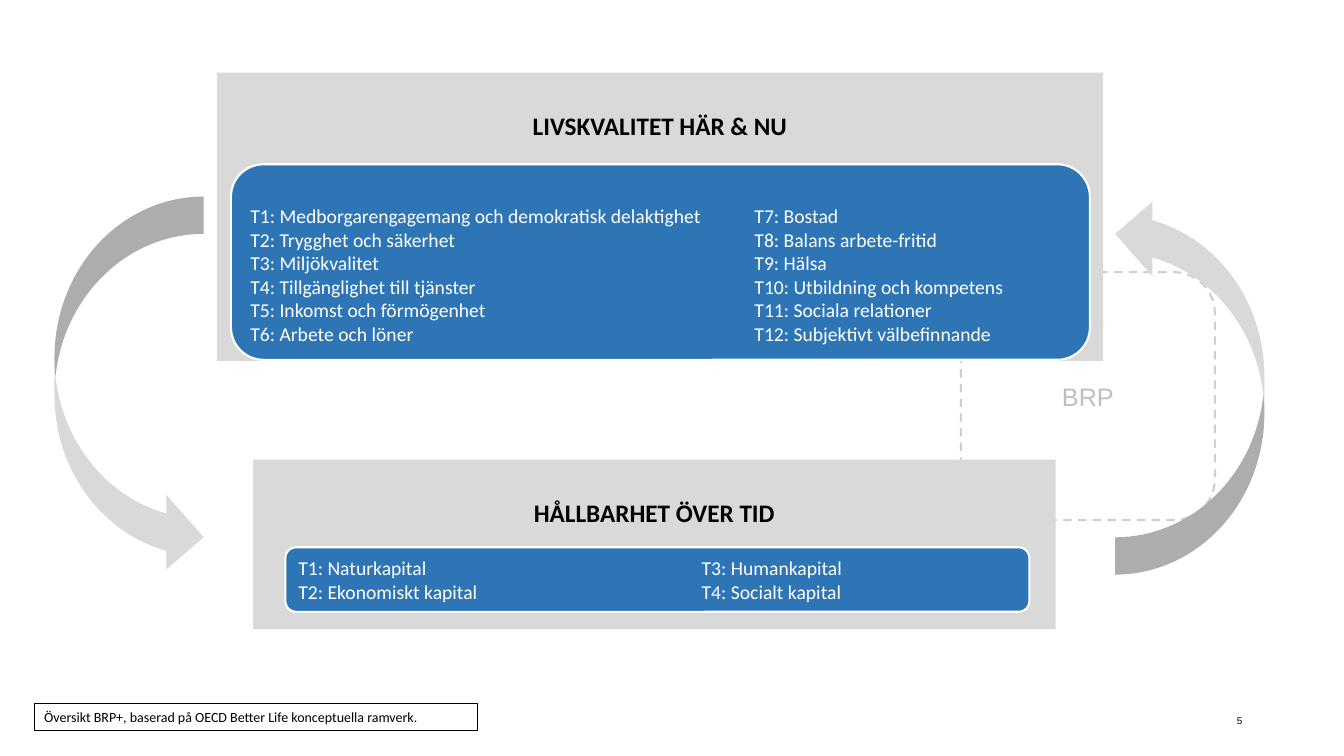
from dataclasses import dataclass

from lxml import etree
from pptx import Presentation
from pptx.dml.color import RGBColor
from pptx.enum.dml import MSO_LINE
from pptx.enum.shapes import MSO_SHAPE as Shape
from pptx.enum.text import MSO_ANCHOR as Anchor, PP_ALIGN as Align
from pptx.oxml.ns import qn
from pptx.util import Inches, Pt


@dataclass(frozen=True)
class Theme:
    panel: str = "D9D9D9"
    blue: str = "2E75B6"
    white: str = "FFFFFF"
    black: str = "000000"
    dash: str = "D0CFCE"
    faded: str = "BFBFBF"
    font: str = "Calibri"
    plain_font: str = "Arial"
    heading_size: float = 18
    list_size: float = 14
    note_size: float = 10
    number_size: float = 7


class SlideBuilder:
    def __init__(self, slide, theme):
        self.slide = slide
        self.theme = theme

    def shape(self, kind, box, fill=None, line=None, width=1.5):
        shape = self.slide.shapes.add_shape(kind, *map(Inches, box))
        shape.shadow.inherit = False
        if fill:
            shape.fill.solid()
            shape.fill.fore_color.rgb = RGBColor.from_string(fill)
        else:
            shape.fill.background()
        if line:
            shape.line.color.rgb = RGBColor.from_string(line)
            shape.line.width = Pt(width)
        else:
            shape.line.fill.background()
        return shape

    def add_text(self, shape, lines, size, color, font=None, bold=False,
                 align=Align.LEFT, anchor=Anchor.MIDDLE, top=0.05, tab=None):
        """Fill a shape with paragraphs; tab is the second column's offset in inches."""
        frame = shape.text_frame
        frame.word_wrap = True
        frame.vertical_anchor = anchor
        frame.margin_left = frame.margin_right = Inches(0.1)
        frame.margin_top, frame.margin_bottom = Inches(top), Inches(0.05)
        for index, line in enumerate(lines):
            paragraph = frame.paragraphs[0] if index == 0 else frame.add_paragraph()
            paragraph.alignment = align
            if tab:
                properties = paragraph._p.get_or_add_pPr()
                tab_list = etree.SubElement(properties, qn("a:tabLst"))
                etree.SubElement(tab_list, qn("a:tab"), pos=str(Inches(tab)), algn="l")
            run = paragraph.add_run()
            run.text = line
            run.font.name = font or self.theme.font
            run.font.size = Pt(size)
            run.font.bold = bold
            run.font.color.rgb = RGBColor.from_string(color)

    def panel(self, box, heading):
        shape = self.shape(Shape.RECTANGLE, box, self.theme.panel)
        self.add_text(shape, [heading], self.theme.heading_size, self.theme.black,
                      bold=True, align=Align.CENTER, anchor=Anchor.TOP, top=0.37)

    def theme_list(self, box, columns, tab, anchor):
        """Number the entries T1, T2, ... down two columns of a rounded box."""
        shape = self.shape(Shape.ROUNDED_RECTANGLE, box, self.theme.blue, self.theme.white)
        left, right = columns
        lines = [f"T{number}: {first}\tT{number + len(left)}: {second}"
                 for number, (first, second) in enumerate(zip(left, right), 1)]
        self.add_text(shape, lines, self.theme.list_size, self.theme.white,
                      anchor=anchor, tab=tab)

    def dashed_box(self, box, label):
        shape = self.shape(Shape.ROUNDED_RECTANGLE, box, line=self.theme.dash)
        shape.line.dash_style = MSO_LINE.DASH
        self.add_text(shape, [label], self.theme.heading_size, self.theme.faded,
                      font=self.theme.plain_font, align=Align.CENTER)

    def cycle_arrow(self, left, rotation):
        arrow = self.shape(Shape.CURVED_RIGHT_ARROW, (left, 1.95, 1.48, 3.75),
                           self.theme.panel)
        arrow.rotation = rotation

    def note(self, box, text):
        shape = self.shape(Shape.RECTANGLE, box, line=self.theme.black, width=0.75)
        self.add_text(shape, [text], self.theme.note_size, self.theme.black)

    def page_number(self, box, number):
        text_box = self.slide.shapes.add_textbox(*map(Inches, box))
        self.add_text(text_box, [number], self.theme.number_size, self.theme.black,
                      font=self.theme.plain_font, align=Align.RIGHT)


QUALITY_OF_LIFE = (
    ["Medborgarengagemang och demokratisk delaktighet", "Trygghet och säkerhet",
     "Miljökvalitet", "Tillgänglighet till tjänster", "Inkomst och förmögenhet",
     "Arbete och löner"],
    ["Bostad", "Balans arbete-fritid", "Hälsa", "Utbildning och kompetens",
     "Sociala relationer", "Subjektivt välbefinnande"],
)
SUSTAINABILITY = (
    ["Naturkapital", "Ekonomiskt kapital"],
    ["Humankapital", "Socialt kapital"],
)


def main():
    presentation = Presentation()
    presentation.slide_width = Inches(13.33)
    presentation.slide_height = Inches(7.5)
    slide = presentation.slides.add_slide(presentation.slide_layouts[6])
    builder = SlideBuilder(slide, Theme())

    builder.dashed_box((9.53, 2.7, 2.52, 2.46), "BRP")
    builder.panel((2.51, 4.56, 7.96, 1.68), "HÅLLBARHET ÖVER TID")
    builder.page_number((9.42, 6.95, 3, 0.4), "5")
    builder.panel((2.15, 0.72, 8.79, 2.86), "LIVSKVALITET HÄR & NU")
    builder.theme_list((2.29, 1.63, 8.52, 1.94), QUALITY_OF_LIFE, 5, Anchor.BOTTOM)
    builder.theme_list((2.83, 5.43, 7.38, 0.64), SUSTAINABILITY, 4, Anchor.MIDDLE)
    builder.cycle_arrow(0.54, 0)
    builder.cycle_arrow(11.06, 180)
    builder.note((0.34, 6.98, 4.4, 0.27),
                 "Översikt BRP+, baserad på OECD Better Life konceptuella ramverk.")
    presentation.save("out.pptx")


if __name__ == "__main__":
    main()
